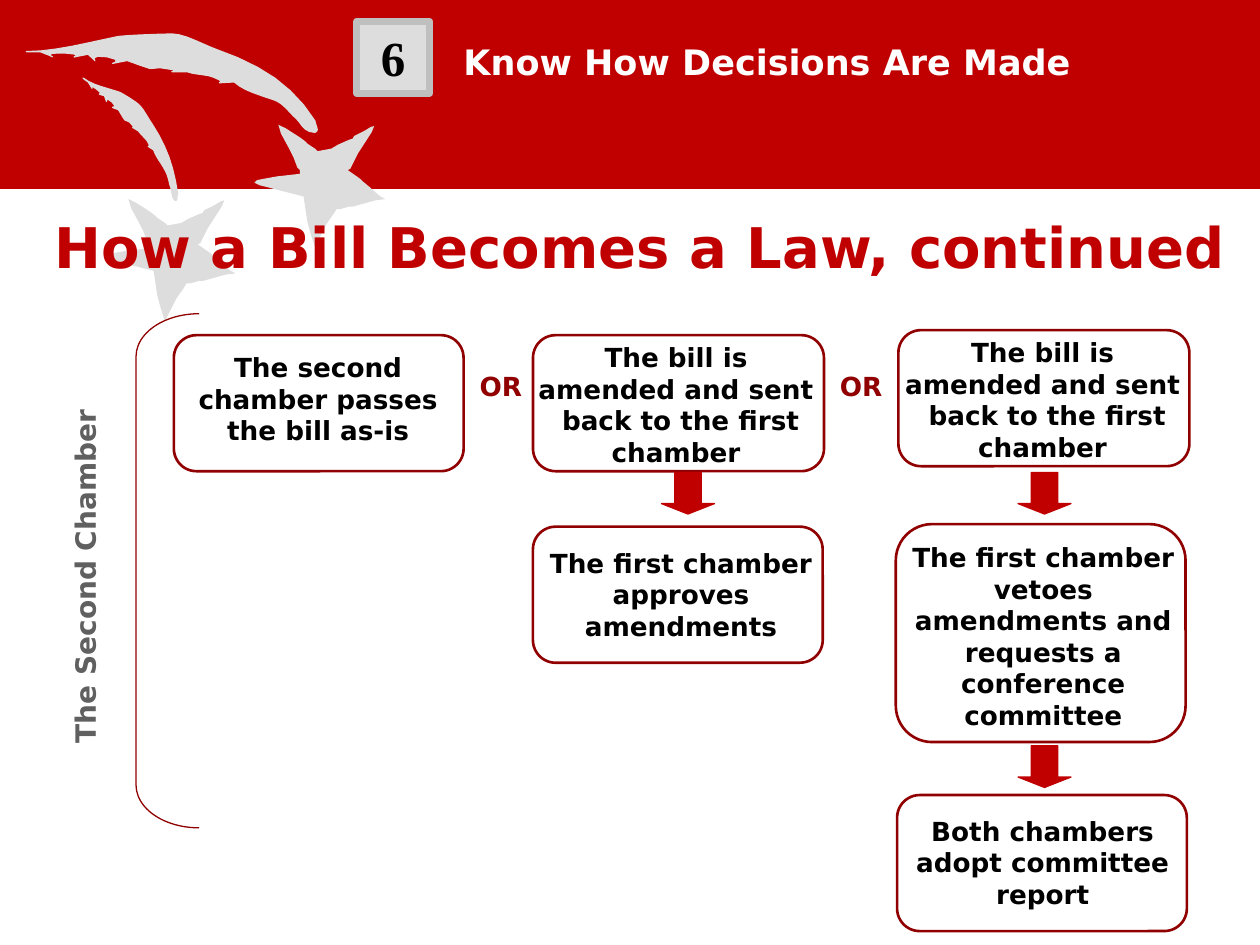
from dataclasses import dataclass

from pptx import Presentation
from pptx.dml.color import RGBColor
from pptx.enum.shapes import MSO_SHAPE
from pptx.enum.text import MSO_ANCHOR, MSO_AUTO_SIZE, PP_ALIGN
from pptx.util import Inches, Pt

RED = RGBColor(0xC0, 0x00, 0x00)
DARK = RGBColor(0x90, 0x00, 0x00)
PALE = RGBColor(0xDD, 0xDD, 0xDD)
RIM = RGBColor(0xBF, 0xBF, 0xBF)
GRAY = RGBColor(0x60, 0x60, 0x60)
BLACK = RGBColor(0x00, 0x00, 0x00)
WHITE = RGBColor(0xFF, 0xFF, 0xFF)

Area = tuple[float, float, float, float]
Point = tuple[float, float]


@dataclass
class Step:
    text: str
    box: Area
    label: Area


AMEND = "The bill is amended and sent  back to the first chamber"
STEPS = [
    Step("The second chamber passes the bill as-is",
         (1.38, 2.66, 2.3, 1.08), (1.3, 2.74, 2.45, 1.08)),
    Step(AMEND, (4.23, 2.66, 2.31, 1.08), (4.17, 2.66, 2.39, 1.08)),
    Step(AMEND, (7.13, 2.62, 2.31, 1.08), (7.08, 2.62, 2.39, 1.08)),
    Step("The first chamber approves amendments",
         (4.23, 4.18, 2.3, 1.08), (4.21, 4.29, 2.39, 1.08)),
    Step("The first chamber vetoes amendments and requests a conference committee",
         (7.11, 4.16, 2.3, 1.73), (7.02, 4.25, 2.52, 1.56)),
    Step("Both chambers adopt committee report",
         (7.12, 6.31, 2.3, 1.08), (7.08, 6.42, 2.39, 1.08)),
]
ARROWS = [(5.25, 3.75), (8.08, 3.75), (8.08, 5.92)]

# Outline points are in hundredths of an inch.
STAR = [
    (276, 135), (286, 142), (288, 144), (294, 149), (296, 151), (302, 156),
    (304, 157), (306, 158), (298, 159), (280, 164), (277, 164), (270, 166),
    (267, 166), (266, 168), (259, 178), (250, 196), (247, 187), (244, 176),
    (241, 156), (206, 147), (202, 145), (204, 143), (209, 142), (220, 140),
    (238, 138), (238, 135), (236, 133), (233, 125), (229, 117), (223, 106),
    (221, 99), (227, 102), (238, 109), (242, 112), (244, 114), (250, 118),
    (252, 120), (263, 118), (268, 115), (277, 111), (280, 110), (281, 108),
    (289, 104), (294, 101), (297, 100), (295, 105), (284, 122), (278, 134),
]
# Tails hold a start point, then two control points and an end for each curve.
SHORT = [
    (66, 62), (74, 68), (85, 70), (94, 73), (97, 74), (108, 81), (110, 83),
    (113, 85), (118, 95), (121, 99), (132, 116), (138, 132), (141, 154),
    (140, 155), (141, 160), (139, 159), (136, 157), (137, 151), (135, 147),
    (134, 143), (133, 138), (131, 135), (128, 129), (124, 125), (122, 119),
    (113, 113), (122, 120), (117, 112), (115, 109), (112, 107), (110, 104),
    (99, 97), (112, 106), (103, 97), (102, 96), (100, 96), (99, 95),
    (97, 92), (94, 87), (94, 87), (83, 83), (96, 88), (89, 81),
    (81, 74), (87, 87), (83, 76), (73, 73), (85, 77), (77, 71),
    (67, 63), (78, 77), (70, 65), (68, 64), (66, 62), (66, 62),
]
LONG = [
    (21, 41), (43, 41), (70, 34), (94, 29), (102, 28), (131, 27), (137, 27),
    (146, 27), (163, 36), (171, 39), (209, 52), (233, 69), (250, 96),
    (250, 99), (254, 104), (250, 105), (240, 105), (239, 96), (233, 92),
    (229, 88), (224, 81), (217, 79), (205, 75), (194, 72), (186, 65),
    (161, 66), (186, 67), (169, 61), (163, 59), (155, 59), (149, 57),
    (119, 57), (156, 57), (129, 54), (126, 53), (121, 55), (118, 54),
    (112, 52), (101, 48), (101, 48), (74, 53), (106, 49), (85, 45),
    (64, 42), (84, 55), (70, 43), (44, 48), (75, 43), (51, 42),
    (24, 41), (56, 50), (32, 41), (28, 41), (21, 41), (21, 41),
]


def curve(knots: list[Point], parts: int = 6) -> list[Point]:
    """Turn a chain of cubic curves into short straight steps."""
    line = [knots[0]]
    for i in range(0, len(knots) - 1, 3):
        for n in range(1, parts + 1):
            t = n / parts
            rates = ((1 - t) ** 3, 3 * t * (1 - t) ** 2, 3 * t * t * (1 - t), t ** 3)
            line.append(tuple(sum(r * k[axis] for r, k in zip(rates, knots[i:i + 4]))
                              for axis in (0, 1)))
    return line


def paint(shape, fill=None, line=None, width: float = 0.75) -> None:
    shape.shadow.inherit = False
    if fill is None:
        shape.fill.background()
    else:
        shape.fill.solid()
        shape.fill.fore_color.rgb = fill
    if line is None:
        shape.line.fill.background()
    else:
        shape.line.color.rgb = line
        shape.line.width = Pt(width)


def place(shape, area: Area) -> None:
    shape.left, shape.top, shape.width, shape.height = map(Inches, area)


def write(shape, text: str, *, size: float = 15, color=BLACK, font: str = "DejaVu Sans",
          align=PP_ALIGN.CENTER, anchor=MSO_ANCHOR.TOP, wrap: bool = True) -> None:
    frame = shape.text_frame
    frame.word_wrap = wrap
    frame.auto_size = MSO_AUTO_SIZE.NONE
    frame.vertical_anchor = anchor
    para = frame.paragraphs[0]
    para.alignment = align
    run = para.add_run()
    run.text = text
    run.font.size = Pt(size)
    run.font.name = font
    run.font.bold = True
    run.font.color.rgb = color


def draw(slide, kind, area: Area, **look):
    shape = slide.shapes.add_shape(kind, *map(Inches, area))
    paint(shape, **look)
    return shape


def label(slide, text: str, area: Area, **form):
    box = slide.shapes.add_textbox(*map(Inches, area))
    write(box, text, **form)
    return box


def trace(slide, points: list[Point], shift: Point = (0, 0), line=None) -> None:
    """Draw a closed pale outline, moved by shift."""
    dots = [((x + shift[0]) * 10, (y + shift[1]) * 10) for x, y in points]
    pen = slide.shapes.build_freeform(*dots[0], scale=Inches(1) / 1000)
    pen.add_line_segments(dots[1:], close=True)
    paint(pen.convert_to_shape(), PALE, line)


def main() -> None:
    deck = Presentation()
    deck.slide_width, deck.slide_height = Inches(10), Inches(7.5)
    slide = deck.slides.add_slide(deck.slide_layouts[5])

    draw(slide, MSO_SHAPE.RECTANGLE, (0, 0, 10, 1.5), fill=RED)
    label(slide, "Know How Decisions Are Made", (3.58, 0.27, 6.17, 0.44),
          size=20, color=WHITE, align=PP_ALIGN.LEFT)
    badge = draw(slide, MSO_SHAPE.RECTANGLE, (2.83, 0.17, 0.58, 0.57),
                 fill=PALE, line=RIM, width=4)
    write(badge, "6", size=28, font="Times New Roman")

    for shift in ((0, 0), (-119, 59)):
        trace(slide, STAR, shift)
    for tail in (SHORT, LONG):
        trace(slide, curve(tail), line=PALE)

    title = slide.shapes.title
    place(title, (0.08, 1.49, 9.75, 0.92))
    write(title, "How a Bill Becomes a Law, continued", size=32, color=RED,
          align=PP_ALIGN.RIGHT, anchor=MSO_ANCHOR.MIDDLE, wrap=False)
    slide.shapes._spTree.append(title._element)  # bring in front of the stars

    side = label(slide, "The Second Chamber", (-1.21, 4.36, 3.83, 0.43),
                 size=16, color=GRAY, wrap=False)
    side.rotation = 270
    brace = draw(slide, MSO_SHAPE.LEFT_BRACKET, (1.08, 2.49, 0.5, 4.08), line=DARK)
    brace.adjustments[0] = 0.68

    for step in STEPS:
        draw(slide, MSO_SHAPE.ROUNDED_RECTANGLE, step.box, line=DARK, width=1.5)
        label(slide, step.text, step.label)
    for left in (3.59, 6.45):
        label(slide, "OR", (left, 2.89, 0.77, 0.81), color=DARK)
    for left, top in ARROWS:
        arrow = draw(slide, MSO_SHAPE.DOWN_ARROW, (left, top, 0.42, 0.33),
                     fill=RED, line=RED)
        arrow.adjustments[1] = 0.25

    deck.save("out.pptx")


if __name__ == "__main__":
    main()
